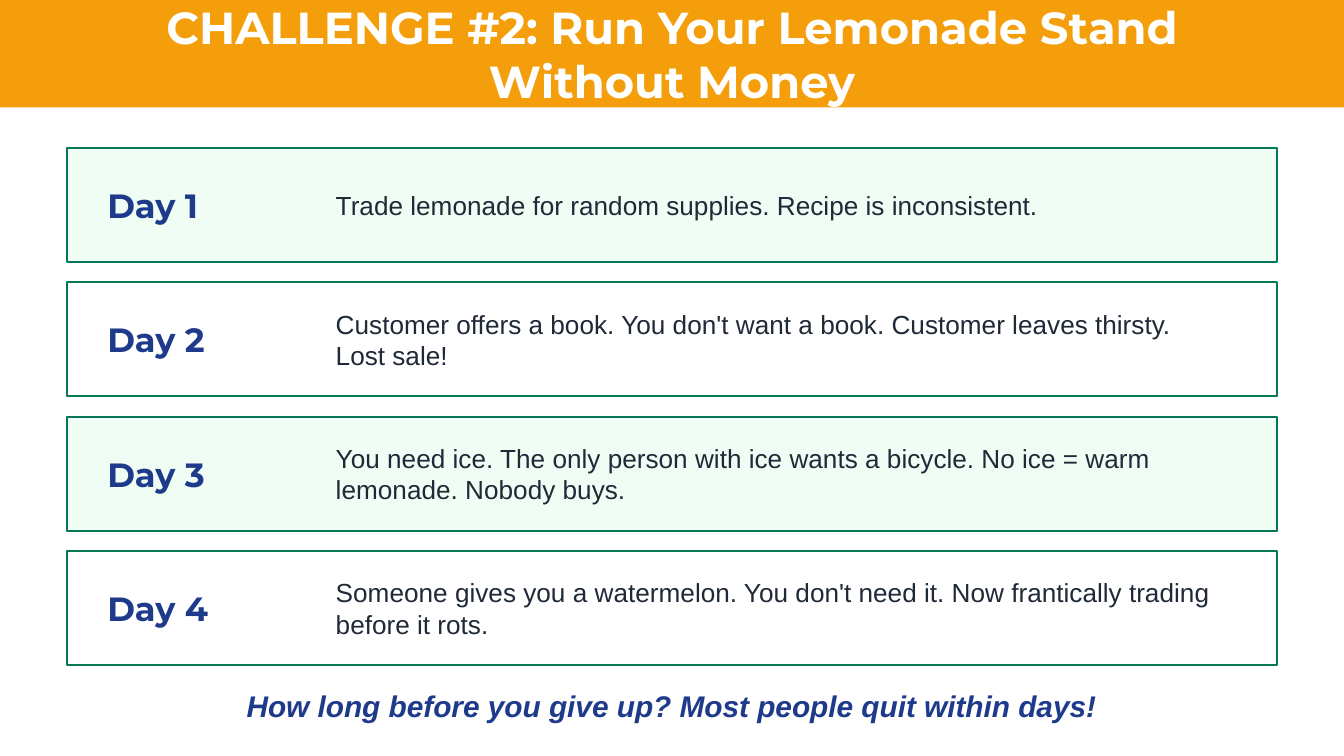
from pptx import Presentation
from pptx.dml.color import RGBColor
from pptx.enum.shapes import MSO_SHAPE
from pptx.enum.text import MSO_ANCHOR, MSO_AUTO_SIZE, PP_ALIGN
from pptx.util import Emu, Pt

EMU_PER_PX = 11430  # 80 px to the inch
SLIDE_WIDTH, SLIDE_HEIGHT = 800, 450
MARGIN = 40
CONTENT_WIDTH = SLIDE_WIDTH - 2 * MARGIN
FIRST_CARD_TOP, CARD_HEIGHT, CARD_STEP = 88, 68, 80

ORANGE, WHITE, MINT = "F59E0B", "FFFFFF", "F0FDF4"
GREEN, NAVY, DARK = "047857", "1E3A8A", "1F2937"
HEADING_FONT, BODY_FONT = "Montserrat", "Arial"

DAYS = [
    "Trade lemonade for random supplies. Recipe is inconsistent.",
    "Customer offers a book. You don't want a book. Customer leaves thirsty. Lost sale!",
    "You need ice. The only person with ice wants a bicycle. No ice = warm lemonade. Nobody buys.",
    "Someone gives you a watermelon. You don't need it. Now frantically trading before it rots.",
]


def px(length):
    return Emu(length * EMU_PER_PX)


def color(hex_value):
    return RGBColor.from_string(hex_value)


def add_panel(slide, left, top, width, height, fill, line=None):
    panel = slide.shapes.add_shape(
        MSO_SHAPE.RECTANGLE, px(left), px(top), px(width), px(height))
    panel.shadow.inherit = False
    panel.fill.solid()
    panel.fill.fore_color.rgb = color(fill)
    if line:
        panel.line.color.rgb = color(line)
        panel.line.width = Pt(1)
    else:
        panel.line.fill.background()


def write_text(box, text, size, font_name, text_color,
               bold=False, italic=False, align=PP_ALIGN.LEFT):
    frame = box.text_frame
    frame.text = text
    frame.word_wrap = True
    frame.auto_size = MSO_AUTO_SIZE.NONE
    frame.vertical_anchor = MSO_ANCHOR.MIDDLE
    para = frame.paragraphs[0]
    para.alignment = align
    font = para.font
    font.size, font.name = Pt(size), font_name
    font.bold, font.italic = bold, italic
    font.color.rgb = color(text_color)


def add_text(slide, left, top, width, height, *content, **style):
    box = slide.shapes.add_textbox(px(left), px(top), px(width), px(height))
    write_text(box, *content, **style)


def add_title(slide, text):
    title = slide.shapes.title
    title.left, title.top = px(MARGIN), px(12)
    title.width, title.height = px(CONTENT_WIDTH), px(40)
    write_text(title, text, 24, HEADING_FONT, WHITE,
               bold=True, align=PP_ALIGN.CENTER)
    # Bring the title in front of its banner
    slide.shapes.element.append(title.element)


def add_day_card(slide, index, story):
    top = FIRST_CARD_TOP + index * CARD_STEP
    fill = WHITE if index % 2 else MINT
    add_panel(slide, MARGIN, top, CONTENT_WIDTH, CARD_HEIGHT, fill, GREEN)
    add_text(slide, 56, top + 20, 120, 28,
             f"Day {index + 1}", 18, HEADING_FONT, NAVY, bold=True)
    add_text(slide, 192, top + 8, 544, 52, story, 14, BODY_FONT, DARK)


def main():
    deck = Presentation()
    deck.slide_width, deck.slide_height = px(SLIDE_WIDTH), px(SLIDE_HEIGHT)
    slide = deck.slides.add_slide(deck.slide_layouts.get_by_name("Title Only"))

    # Title banner
    add_panel(slide, 0, 0, SLIDE_WIDTH, 64, ORANGE)
    add_title(slide, "CHALLENGE #2: Run Your Lemonade Stand Without Money")

    # One card per day
    for index, story in enumerate(DAYS):
        add_day_card(slide, index, story)

    # Closing question
    add_text(slide, MARGIN, 408, CONTENT_WIDTH, 24,
             "How long before you give up? Most people quit within days!",
             16, BODY_FONT, NAVY, bold=True, italic=True, align=PP_ALIGN.CENTER)

    deck.save("out.pptx")


if __name__ == "__main__":
    main()
